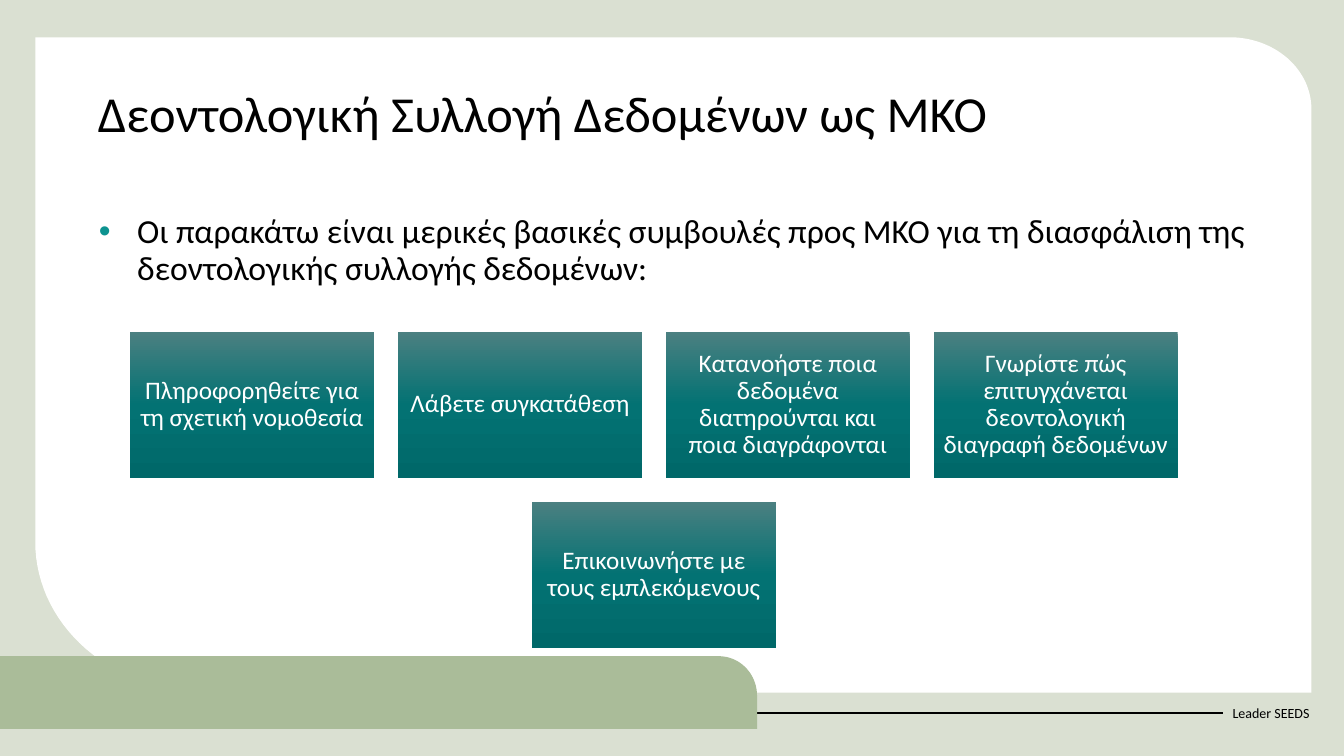
from copy import deepcopy
from math import cos, radians, sin
from typing import NamedTuple

from pptx import Presentation
from pptx.dml.color import RGBColor
from pptx.enum.shapes import MSO_CONNECTOR, MSO_SHAPE
from pptx.enum.text import MSO_ANCHOR, MSO_AUTO_SIZE, PP_ALIGN
from pptx.oxml.ns import qn
from pptx.oxml.xmlchemy import OxmlElement
from pptx.util import Emu, Inches, Pt

WIDE, HIGH = Inches(13.33), Inches(7.5)
BLACK = RGBColor(0x00, 0x00, 0x00)
WHITE = RGBColor(0xFF, 0xFF, 0xFF)
PALE = RGBColor(0xDA, 0xE0, 0xD2)
SAGE = RGBColor(0xAA, 0xBC, 0x99)
TEAL = RGBColor(0x0D, 0x93, 0x90)
FADE = (
    (0, RGBColor(0x4B, 0x80, 0x81)),
    (0.5, RGBColor(0x03, 0x72, 0x73)),
    (1, RGBColor(0x00, 0x68, 0x69)),
)


class Box(NamedTuple):
    x: float
    y: float
    w: float
    h: float


class Card(NamedTuple):
    col: float
    row: int
    text: str


GRID = Box(9.68, 43.87, 18.15, 19.33)
STEP_X, STEP_Y = 19.93, 22.53
CARDS = (
    Card(0, 0, "Πληροφορηθείτε για τη σχετική νομοθεσία"),
    Card(1, 0, "Λάβετε συγκατάθεση"),
    Card(2, 0, "Κατανοήστε ποια δεδομένα διατηρούνται και ποια διαγράφονται"),
    Card(3, 0, "Γνωρίστε πώς επιτυγχάνεται δεοντολογική διαγραφή δεδομένων"),
    Card(1.5, 1, "Επικοινωνήστε με τους εμπλεκόμενους"),
)


def cols(n: float) -> Emu:
    return Emu(round(WIDE * n / 100))


def rows(n: float) -> Emu:
    return Emu(round(HIGH * n / 100))


def place(box: Box) -> tuple:
    return cols(box.x), rows(box.y), cols(box.w), rows(box.h)


def write(shape, text: str, *, size: float, color=BLACK, align=PP_ALIGN.LEFT,
          anchor=MSO_ANCHOR.TOP, space: float = 1, inset: float = 0) -> None:
    frame = shape.text_frame
    frame.word_wrap = True
    frame.auto_size = MSO_AUTO_SIZE.NONE
    frame.vertical_anchor = anchor
    if inset:
        frame.margin_left = frame.margin_right = Inches(inset)
        frame.margin_top = frame.margin_bottom = Inches(inset)
    para = frame.paragraphs[0]
    para.alignment = align
    para.line_spacing = space
    para.space_before = Pt(0)
    run = para.add_run()
    run.text = text
    run.font.size = Pt(size)
    run.font.name = "Calibri"
    run.font.color.rgb = color


def arc(box: Box, start: int) -> list:
    turns = [radians(start + step * 3) for step in range(31)]
    return [(box.x + box.w * cos(t), box.y + box.h * sin(t)) for t in turns]


def paint(shape, color: RGBColor) -> None:
    shape.shadow.inherit = False
    shape.fill.solid()
    shape.fill.fore_color.rgb = color
    shape.line.fill.background()


def trace(slide, spots: list, color: RGBColor) -> None:
    ends = [(cols(x), rows(y)) for x, y in spots]
    pen = slide.shapes.build_freeform(*ends[0])
    pen.add_line_segments(ends[1:], close=True)
    paint(pen.convert_to_shape(), color)


def fade(shape) -> None:
    shape.fill.gradient()
    shape.fill.gradient_angle = 270
    stops = next(shape.element.iter(qn("a:gsLst")))
    stops.append(deepcopy(stops[0]))
    for stop, (spot, color) in zip(shape.fill.gradient_stops, FADE):
        stop.position = spot
        stop.color.rgb = color


def bullet(shape) -> None:
    props = shape.element.txBody.p_lst[0].get_or_add_pPr()
    props.set("marL", str(Inches(0.39)))
    props.set("indent", str(Inches(-0.38)))
    tint = OxmlElement("a:buClr")
    shade = OxmlElement("a:srgbClr")
    shade.set("val", str(TEAL))
    tint.append(shade)
    mark = OxmlElement("a:buChar")
    mark.set("char", "•")
    props.extend([tint, mark])


def frame(slide) -> None:
    back = slide.shapes.add_shape(MSO_SHAPE.RECTANGLE, *place(Box(0, 0, 100, 100)))
    paint(back, PALE)
    panel = [(2.63, 4.93), *arc(Box(91.5, 14.4, 6.08, 9.47), -90),
             (97.58, 91.6), *arc(Box(15.38, 71.73, 12.75, 19.87), 90)]
    trace(slide, panel, WHITE)
    foot = slide.shapes.add_textbox(*place(Box(90.98, 91.6, 7.58, 5.33)))
    write(foot, "Leader SEEDS", size=10, anchor=MSO_ANCHOR.MIDDLE)
    rule = slide.shapes.add_connector(
        MSO_CONNECTOR.STRAIGHT, 0, rows(94.27), cols(90.98), rows(94.27))
    rule.line.color.rgb = BLACK
    rule.line.width = Pt(1.5)
    rule.element.spPr.append(OxmlElement("a:effectLst"))
    band = [(0, 96.4), (0, 86.8), *arc(Box(53.48, 92, 2.85, 5.2), -90), (56.33, 96.4)]
    trace(slide, band, SAGE)


def fill(holder, box: Box) -> None:
    holder.left, holder.top, holder.width, holder.height = place(box)
    holder.element.getparent().append(holder.element)


def deal(slide, card: Card) -> None:
    box = GRID._replace(x=GRID.x + card.col * STEP_X, y=GRID.y + card.row * STEP_Y)
    tile = slide.shapes.add_shape(MSO_SHAPE.RECTANGLE, *place(box))
    tile.shadow.inherit = False
    tile.line.fill.background()
    fade(tile)
    write(tile, card.text, size=18, color=WHITE, align=PP_ALIGN.CENTER,
          anchor=MSO_ANCHOR.MIDDLE, space=0.9, inset=0.07)


def main() -> None:
    deck = Presentation()
    deck.slide_width, deck.slide_height = WIDE, HIGH
    slide = deck.slides.add_slide(deck.slide_layouts[1])
    title, body = slide.placeholders
    frame(slide)
    fill(title, Box(6.53, 11.07, 86.93, 11.73))
    write(title, "Δεοντολογική Συλλογή Δεδομένων ως ΜΚΟ", size=36, space=0.9)
    fill(body, Box(6.53, 27.73, 86.93, 58.27))
    bullet(body)
    write(body, "Οι παρακάτω είναι μερικές βασικές συμβουλές προς ΜΚΟ για τη "
          "διασφάλιση της δεοντολογικής συλλογής δεδομένων:", size=24, space=0.9)
    for card in CARDS:
        deal(slide, card)
    deck.save("out.pptx")


if __name__ == "__main__":
    main()
